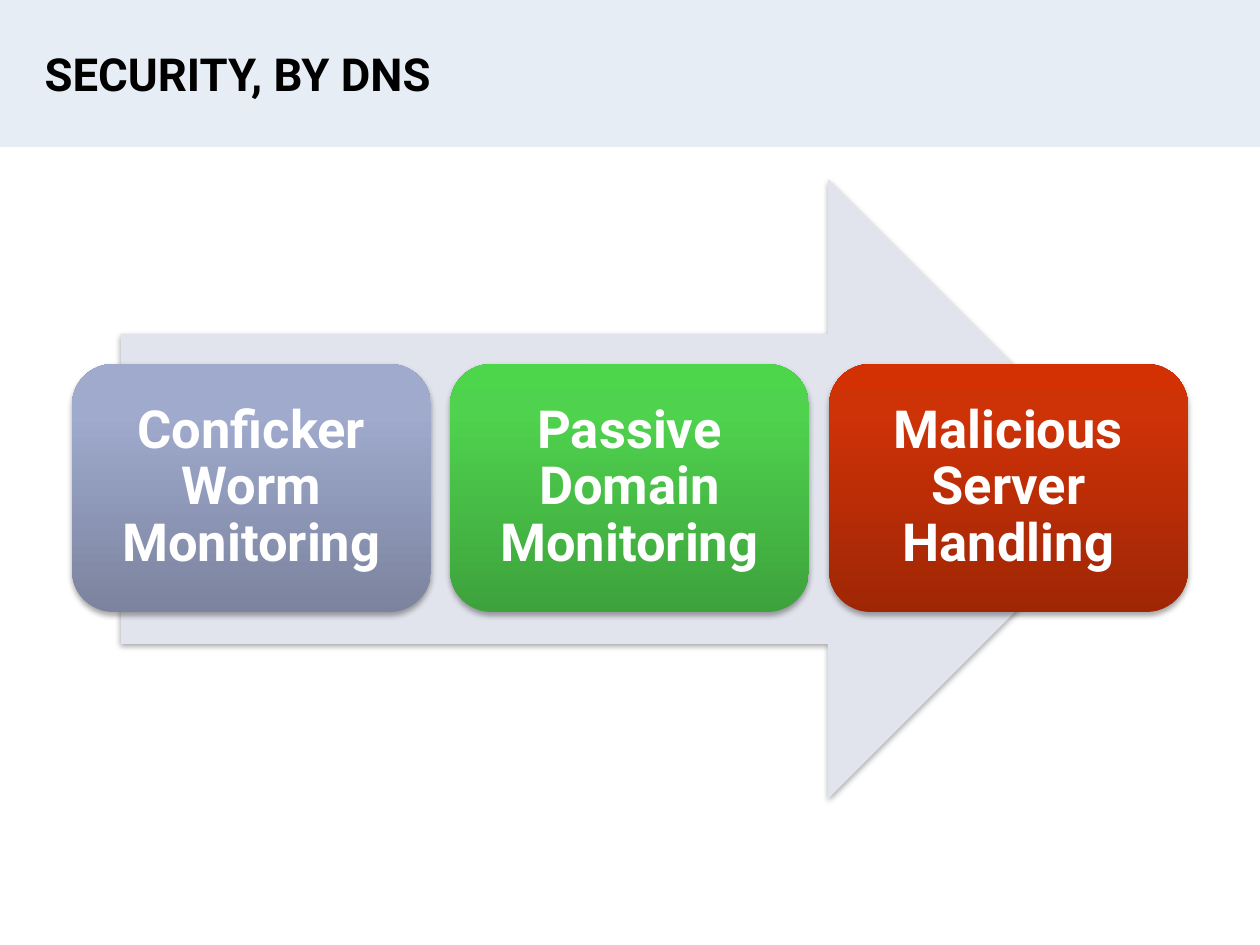
from copy import deepcopy
from dataclasses import dataclass

from lxml import etree
from pptx import Presentation
from pptx import util as u
from pptx.dml.color import RGBColor
from pptx.enum import shapes, text
from pptx.oxml.ns import qn

PX_PER_INCH = 126
FONT = "Roboto"
BLACK = RGBColor(0x00, 0x00, 0x00)
WHITE = RGBColor(0xFF, 0xFF, 0xFF)
BAND_BLUE = RGBColor(0x14, 0x4F, 0xA3)
ARROW_GREY = RGBColor(0xE2, 0xE4, 0xED)
SLATE = (RGBColor(0x7B, 0x83, 0x9E), RGBColor(0x9F, 0xAA, 0xCD), RGBColor(0x9F, 0xAA, 0xCF))
GREEN = (RGBColor(0x3D, 0xA2, 0x3C), RGBColor(0x4F, 0xD2, 0x4E), RGBColor(0x4D, 0xD6, 0x4C))
RED = (RGBColor(0x9F, 0x26, 0x05), RGBColor(0xCE, 0x32, 0x07), RGBColor(0xD3, 0x30, 0x03))
STOP_POSITIONS = (0, 0.8, 1)
CARD_LEFT, CARD_TOP, CARD_WIDTH, CARD_HEIGHT = 72, 364, 359, 248
CARD_SPAN = 757


@dataclass(frozen=True)
class Card:
    label: str
    gradient: tuple[RGBColor, RGBColor, RGBColor]


CARDS = (
    Card("Conficker Worm Monitoring", SLATE),
    Card("Passive Domain Monitoring", GREEN),
    Card("Malicious Server Handling", RED),
)


def px(length: int) -> u.Emu:
    return u.Emu(round(length * 914400 / PX_PER_INCH))


def add_box(page, kind, left: int, top: int, width: int, height: int):
    box = page.shapes.add_shape(kind, px(left), px(top), px(width), px(height))
    box.shadow.inherit = False
    box.line.fill.background()
    return box


def fill_solid(box, color: RGBColor) -> None:
    box.fill.solid()
    box.fill.fore_color.rgb = color


def fill_gradient(box, colors: tuple[RGBColor, RGBColor, RGBColor]) -> None:
    box.fill.gradient()
    box.fill.gradient_angle = 90
    stop_list = box._element.spPr.find(qn("a:gradFill")).find(qn("a:gsLst"))
    stop_list.append(deepcopy(stop_list[-1]))
    for stop, color, position in zip(box.fill.gradient_stops, colors, STOP_POSITIONS):
        stop.color.rgb = color
        stop.position = position


def set_alpha(parent, percent: int) -> None:
    etree.SubElement(parent, qn("a:alpha"), val=str(percent * 1000))


def add_shadow(box) -> None:
    effects = box._element.spPr.find(qn("a:effectLst"))
    shadow = etree.SubElement(
        effects, qn("a:outerShdw"), blurRad="40000", dist="23000", dir="5400000", rotWithShape="0"
    )
    set_alpha(etree.SubElement(shadow, qn("a:srgbClr"), val=str(BLACK)), 35)


def write_text(box, words: str, size: int, color: RGBColor, align) -> None:
    frame = box.text_frame
    frame.word_wrap = True
    frame.auto_size = text.MSO_AUTO_SIZE.NONE
    frame.vertical_anchor = text.MSO_ANCHOR.MIDDLE
    frame.text = words
    para = frame.paragraphs[0]
    para.alignment = align
    para.font.name = FONT
    para.font.size = u.Pt(size)
    para.font.bold = True
    para.font.color.rgb = color


def add_title(page) -> None:
    band = add_box(page, shapes.MSO_SHAPE.RECTANGLE, 0, 0, 1260, 147)
    fill_solid(band, BAND_BLUE)
    set_alpha(band._element.spPr.find(qn("a:solidFill"))[0], 10)
    title = page.shapes.title
    title._element.addprevious(band._element)
    title.left, title.top, title.width, title.height = px(32), px(0), px(1008), px(147)
    write_text(title, "SECURITY, BY DNS", 26, BLACK, text.PP_ALIGN.LEFT)


def add_arrow(page) -> None:
    arrow = add_box(page, shapes.MSO_SHAPE.RIGHT_ARROW, 121, 179, 1017, 620)
    fill_solid(arrow, ARROW_GREY)
    add_shadow(arrow)


def add_card(page, index: int, card: Card) -> None:
    left = CARD_LEFT + index * CARD_SPAN // 2
    box = add_box(
        page, shapes.MSO_SHAPE.ROUNDED_RECTANGLE, left, CARD_TOP, CARD_WIDTH, CARD_HEIGHT
    )
    fill_gradient(box, card.gradient)
    add_shadow(box)
    write_text(box, card.label, 30, WHITE, text.PP_ALIGN.CENTER)
    frame = box.text_frame
    frame.margin_left = frame.margin_right = frame.margin_top = frame.margin_bottom = px(15)
    frame.paragraphs[0].line_spacing = 0.9


def main() -> None:
    deck = Presentation()
    deck.slide_width, deck.slide_height = px(1260), px(945)
    page = deck.slides.add_slide(deck.slide_layouts.get_by_name("Title Only"))
    add_title(page)
    add_arrow(page)
    for index, card in enumerate(CARDS):
        add_card(page, index, card)
    deck.save("out.pptx")


if __name__ == "__main__":
    main()
